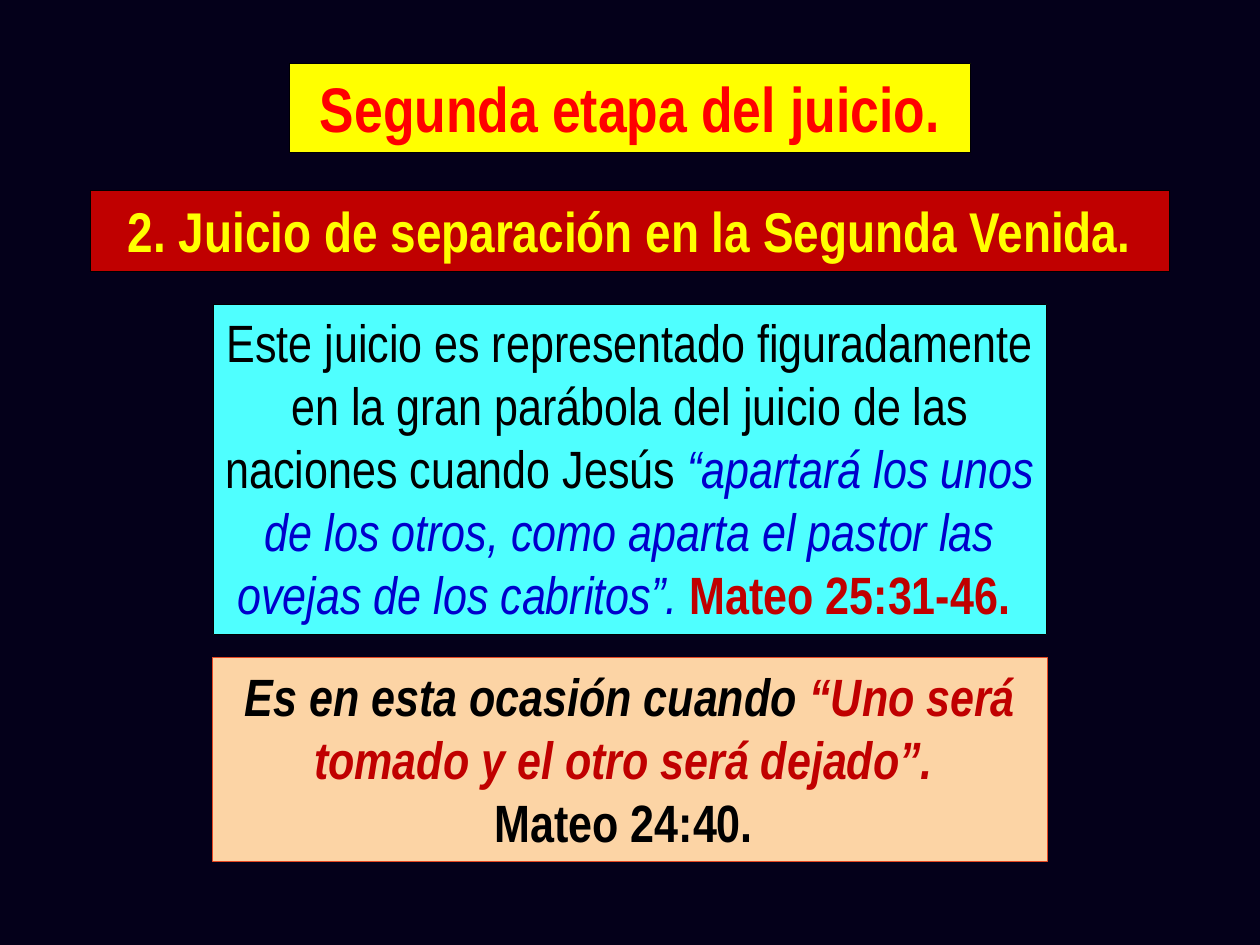
from pptx import Presentation
from pptx.dml.color import RGBColor
from pptx.enum.shapes import MSO_SHAPE
from pptx.enum.text import MSO_ANCHOR, MSO_AUTO_SIZE, PP_ALIGN
from pptx.util import Pt

THEME = {
    "font": "Arial Narrow",
    "title": 36, "heading": 32, "body": 30,
    "night": "04001A", "black": "000000", "red": "FF0000", "dark_red": "C00000",
    "yellow": "FFFF00", "cyan": "4FFFFF", "blue": "0000CC",
    "peach": "FCD4A5", "orange": "E64823",
}
SLIDE_W, SLIDE_H = 720, 540

# Each panel is centred on the slide; a run is (text, colour, style),
# where style holds "b" for bold and "i" for italic.
PANELS = [
    {"top": 36, "width": 389.5, "height": 51, "fill": "yellow", "line": "black",
     "size": "title",
     "paragraphs": [[("Segunda etapa del juicio.", "red", "b")]]},
    {"top": 109, "width": 617, "height": 46, "fill": "dark_red", "line": "black",
     "size": "heading",
     "paragraphs": [[("2. Juicio de separación en la Segunda Venida.", "yellow", "b")]]},
    {"top": 173.75, "width": 476.5, "height": 189, "fill": "cyan", "line": "black",
     "size": "body",
     "paragraphs": [[
         ("Este juicio es representado figuradamente en la gran parábola del juicio "
          "de las naciones cuando Jesús ", "black", ""),
         ("“apartará los unos de los otros, como aparta el pastor las ovejas "
          "de los cabritos”. ", "blue", "i"),
         ("Mateo 25:31-46. ", "dark_red", "b")]]},
    {"top": 375.75, "width": 477, "height": 116.5, "fill": "peach", "line": "orange",
     "size": "body",
     "paragraphs": [
         [("Es en esta ocasión cuando ", "black", "bi"),
          ("“Uno será tomado y el otro será dejado”. ", "dark_red", "bi")],
         [("Mateo 24:40. ", "black", "b")]]},
]


def color(name):
    return RGBColor.from_string(THEME[name])


def add_run(p, text, *, size, fill, style):
    r = p.add_run()
    r.text = text
    r.font.name = THEME["font"]
    r.font.size = Pt(THEME[size])
    r.font.color.rgb = color(fill)
    r.font.bold = "b" in style
    r.font.italic = "i" in style


def add_panel(slide, paragraphs, *, top, width, height, fill, line, size):
    left = (SLIDE_W - width) / 2
    sp = slide.shapes.add_shape(MSO_SHAPE.RECTANGLE, Pt(left), Pt(top), Pt(width), Pt(height))
    sp.shadow.inherit = False
    sp.fill.solid()
    sp.fill.fore_color.rgb = color(fill)
    sp.line.color.rgb = color(line)
    sp.line.width = Pt(0.5)
    tf = sp.text_frame
    tf.word_wrap = True
    tf.auto_size = MSO_AUTO_SIZE.SHAPE_TO_FIT_TEXT
    tf.vertical_anchor = MSO_ANCHOR.TOP
    for i, runs in enumerate(paragraphs):
        p = tf.add_paragraph() if i else tf.paragraphs[0]
        p.alignment = PP_ALIGN.CENTER
        for text, ink, style in runs:
            add_run(p, text, size=size, fill=ink, style=style)


def main():
    prs = Presentation()
    prs.slide_width, prs.slide_height = Pt(SLIDE_W), Pt(SLIDE_H)
    slide = prs.slides.add_slide(prs.slide_layouts[6])
    slide.background.fill.solid()
    slide.background.fill.fore_color.rgb = color("night")
    for panel in PANELS:
        add_panel(slide, **panel)
    prs.save("out.pptx")


if __name__ == "__main__":
    main()
